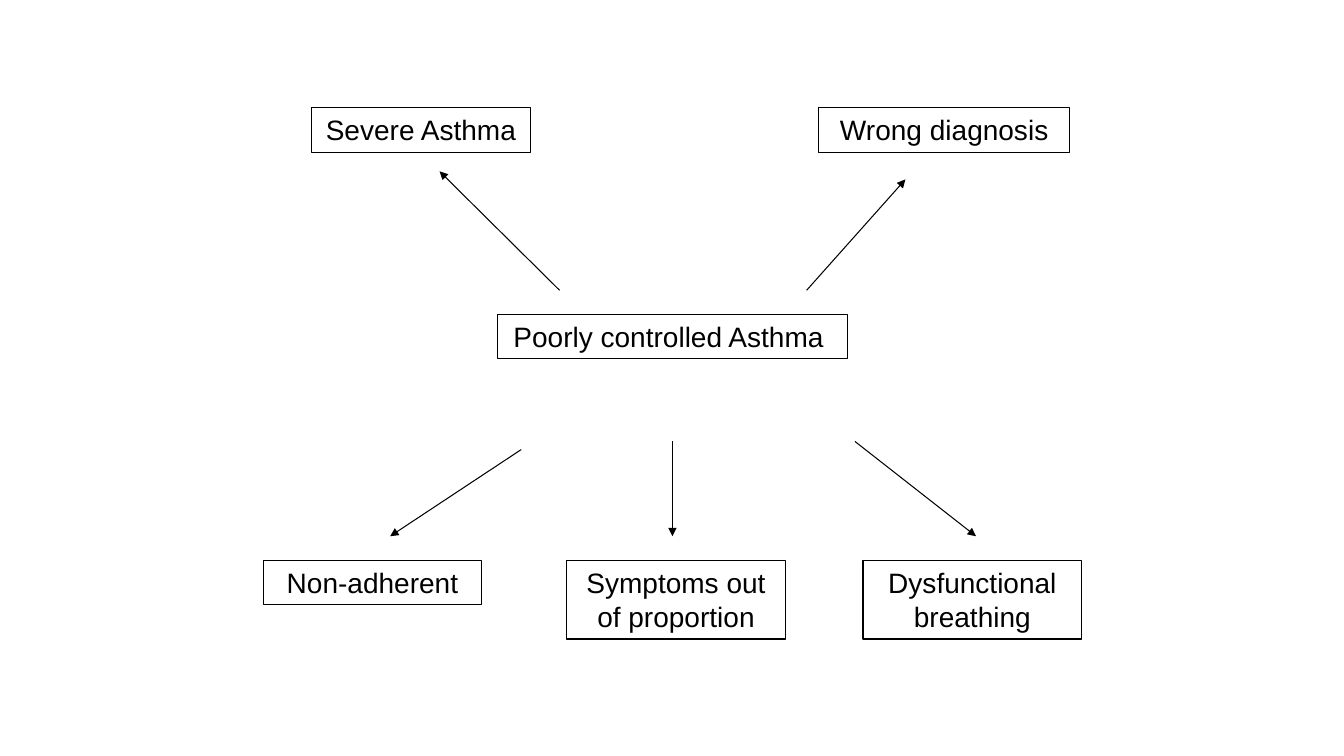
from lxml import etree
from pptx import Presentation
from pptx.dml.color import RGBColor
from pptx.enum.shapes import MSO_CONNECTOR, MSO_SHAPE
from pptx.enum.text import MSO_ANCHOR, MSO_AUTO_SIZE, PP_ALIGN
from pptx.oxml.ns import qn
from pptx.util import Inches, Pt

STRAIGHT = MSO_CONNECTOR.STRAIGHT
RECTANGLE = MSO_SHAPE.RECTANGLE
TOP = MSO_ANCHOR.TOP
GROW = MSO_AUTO_SIZE.SHAPE_TO_FIT_TEXT
CENTER = PP_ALIGN.CENTER

BLANK_LAYOUT = 6
BLACK = "000000"
LINE_WIDTH = Pt(0.75)
ONE_LINE, TWO_LINES = 0.44, 0.78
BOX_WIDTH = 2.17

# Regions: left, top, width, height in inches
CENTRE = (4.93, 3.12, 3.48, ONE_LINE)
UPPER = (3.09, 1.07, 7.52, 1.81)
LOWER = (2.61, 4.38, 8.12, 1.96)

# Causes: label, box (left, top, width, height), arrow (from x, y, to x, y),
# all measured from the corner of the region
UPPER_CAUSES = [
    ("Severe Asthma", (0, 0, BOX_WIDTH, ONE_LINE), (2.46, 1.81, 1.27, 0.63)),
    ("Wrong diagnosis", (5.03, 0, 2.49, ONE_LINE), (4.91, 1.81, 5.89, 0.71)),
]
LOWER_CAUSES = [
    ("Non-adherent", (0, 1.18, BOX_WIDTH, ONE_LINE), (2.56, 0.08, 1.26, 0.94)),
    ("Symptoms out of proportion", (3.01, 1.18, BOX_WIDTH, TWO_LINES),
     (4.06, 0, 4.06, 0.94)),
    ("Dysfunctional breathing", (5.95, 1.18, BOX_WIDTH, TWO_LINES),
     (5.87, 0, 7.07, 0.94)),
]


def color(value):
    return RGBColor.from_string(value)


def style_line(line):
    line.color.rgb = color(BLACK)
    line.width = LINE_WIDTH


def add_label(page, label, left, top, width, height):
    """Outlined box with centred text."""
    box = page.shapes.add_shape(
        RECTANGLE, Inches(left), Inches(top), Inches(width), Inches(height))
    box.shadow.inherit = False
    box.fill.background()
    style_line(box.line)
    frame = box.text_frame
    frame.word_wrap = True
    frame.auto_size = GROW
    frame.vertical_anchor = TOP
    para = frame.paragraphs[0]
    para.text = label
    para.alignment = CENTER
    para.font.name = "Arial"
    para.font.size = Pt(20)
    para.font.color.rgb = color(BLACK)


def add_arrow(page, start_x, start_y, end_x, end_y):
    """Straight line with a triangle at its end."""
    arrow = page.shapes.add_connector(
        STRAIGHT, Inches(start_x), Inches(start_y), Inches(end_x), Inches(end_y))
    style_line(arrow.line)
    etree.SubElement(arrow.line._get_or_add_ln(), qn("a:tailEnd"), type="triangle")
    etree.SubElement(arrow._element.spPr, qn("a:effectLst"))


def add_causes(page, region, causes):
    """Boxes of one region, each with the arrow that points to it."""
    left, top = region[:2]
    for label, (box_x, box_y, width, height), (x1, y1, x2, y2) in causes:
        add_label(page, label, left + box_x, top + box_y, width, height)
        add_arrow(page, left + x1, top + y1, left + x2, top + y2)


def main():
    deck = Presentation()
    deck.slide_width = Inches(13.33)
    deck.slide_height = Inches(7.5)
    page = deck.slides.add_slide(deck.slide_layouts[BLANK_LAYOUT])
    # The trailing space shifts the centred text slightly left
    add_label(page, "Poorly controlled Asthma ", *CENTRE)
    add_causes(page, UPPER, UPPER_CAUSES)
    add_causes(page, LOWER, LOWER_CAUSES)
    deck.save("out.pptx")


if __name__ == "__main__":
    main()
